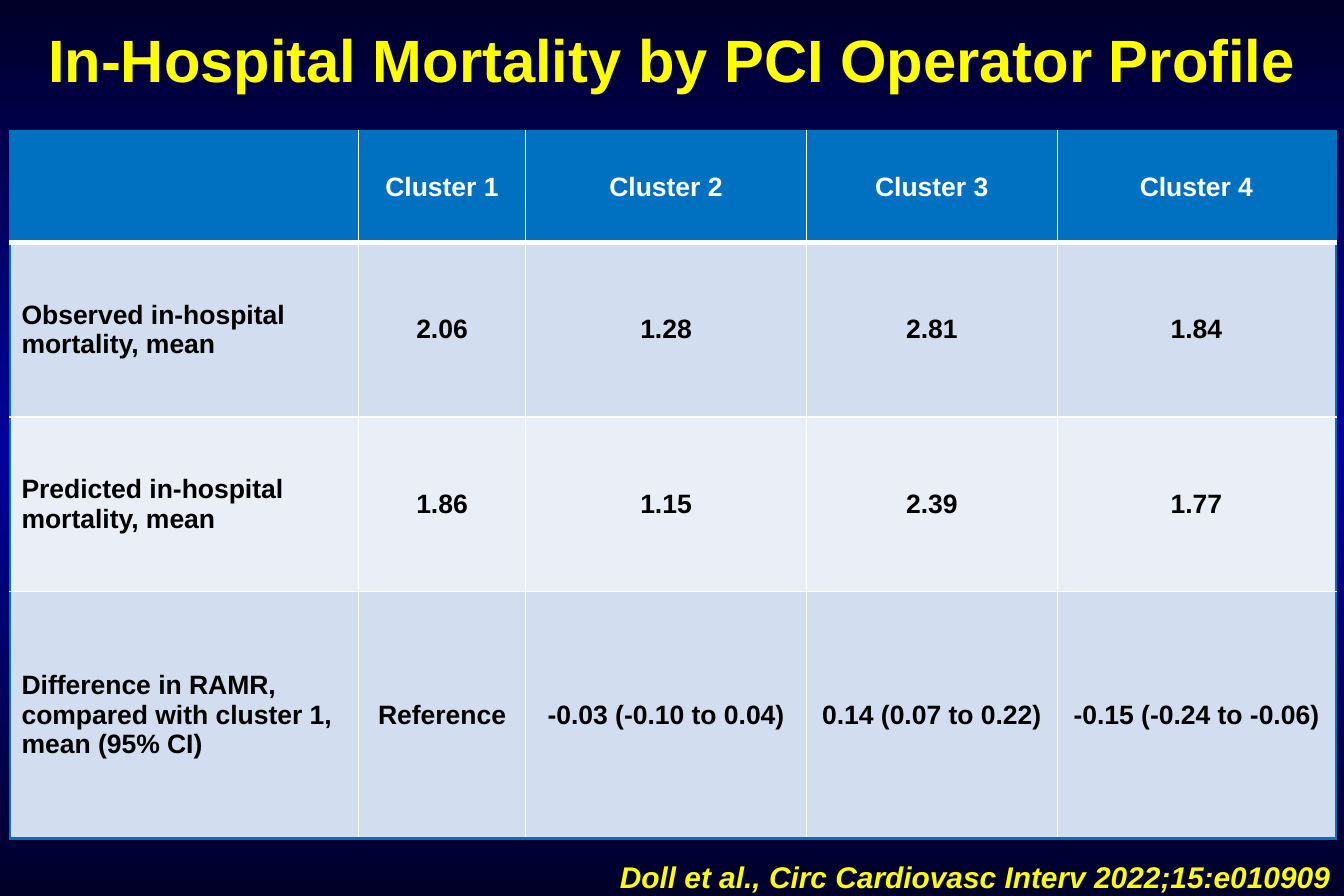
from copy import deepcopy

from lxml.etree import SubElement
from pptx import Presentation
from pptx.dml.color import RGBColor
from pptx.enum.text import MSO_ANCHOR, MSO_AUTO_SIZE, PP_ALIGN
from pptx.oxml.ns import qn
from pptx.util import Pt

NAVY = RGBColor(0x00, 0x00, 0x28)
INDIGO = RGBColor(0x00, 0x00, 0x9C)
YELLOW = RGBColor(0xFF, 0xFF, 0x00)
WHITE = RGBColor(0xFF, 0xFF, 0xFF)
BLACK = RGBColor(0x00, 0x00, 0x00)
BLUE = RGBColor(0x00, 0x70, 0xC0)
BANDS = [RGBColor(0xEA, 0xEF, 0xF7), RGBColor(0xD2, 0xDE, 0xEF)]

TITLE = "In-Hospital Mortality by PCI Operator Profile"
CITE = "Doll et al., Circ Cardiovasc Interv 2022;15:e010909"
ROWS = [
    ["", "Cluster 1", "Cluster 2", "Cluster 3", "Cluster 4"],
    ["Observed in-hospital mortality, mean", "2.06", "1.28", "2.81", "1.84"],
    ["Predicted in-hospital mortality, mean", "1.86", "1.15", "2.39", "1.77"],
    ["Difference in RAMR, compared with cluster 1, mean (95% CI)", "Reference",
     "-0.03 (-0.10 to 0.04)", "0.14 (0.07 to 0.22)", "-0.15 (-0.24 to -0.06)"],
]
WIDTHS = [210.2, 100.8, 169.2, 151.2, 167.8]
HEIGHTS = [67, 105.1, 105.1, 149]
GRADIENT = [(0, NAVY), (0.5, INDIGO), (1, NAVY)]
LAST_ROW, LAST_COL = len(ROWS) - 1, len(WIDTHS) - 1


def write(frame, text, color, align, **look):
    para = frame.paragraphs[0]
    para.alignment = align
    run = para.add_run()
    run.text = text
    run.font.color.rgb = color
    for key, value in {"name": "Arial", "bold": True, **look}.items():
        setattr(run.font, key, value)


def add_label(slide, box, text, wrap, align, **look):
    frame = slide.shapes.add_textbox(*map(Pt, box)).text_frame
    frame.word_wrap = wrap
    frame.auto_size = MSO_AUTO_SIZE.SHAPE_TO_FIT_TEXT
    write(frame, text, YELLOW, align, **look)


def edge(cell, side, color, width):
    """Draw one border of a cell; call before filling the cell."""
    line = SubElement(cell._tc.get_or_add_tcPr(), qn("a:ln" + side), w=str(Pt(width)))
    SubElement(SubElement(line, qn("a:solidFill")), qn("a:srgbClr"), val=str(color))


def style(cell, row, col):
    rim, grid = (BLUE, 1.5), (WHITE, 1)
    rule = (WHITE, 3)
    edge(cell, "L", *(rim if col == 0 else grid))
    edge(cell, "R", *(rim if col == LAST_COL else grid))
    edge(cell, "T", *(rim if row == 0 else rule if row == 1 else grid))
    edge(cell, "B", *(rule if row == 0 else rim if row == LAST_ROW else grid))
    cell.fill.solid()
    cell.fill.fore_color.rgb = BANDS[row % 2] if row else BLUE
    cell.vertical_anchor = MSO_ANCHOR.MIDDLE


def add_grid(slide):
    table = slide.shapes.add_table(len(ROWS), len(WIDTHS), Pt(5.8), Pt(79.2),
                                   Pt(sum(WIDTHS)), Pt(sum(HEIGHTS))).table
    for column, width in zip(table.columns, WIDTHS):
        column.width = Pt(width)
    for row, (texts, height) in enumerate(zip(ROWS, HEIGHTS)):
        table.rows[row].height = Pt(height)
        for col, text in enumerate(texts):
            cell = table.cell(row, col)
            style(cell, row, col)
            if text:
                write(cell.text_frame, text, BLACK if row else WHITE,
                      PP_ALIGN.CENTER if col else PP_ALIGN.LEFT, size=Pt(16))


def paint(slide):
    fill = slide.background.fill
    fill.gradient()
    fill.gradient_angle = 270
    stops = slide.element.find(".//" + qn("a:gsLst"))
    stops.append(deepcopy(stops[-1]))
    for stop, (place, color) in zip(fill.gradient_stops, GRADIENT):
        stop.position = place
        stop.color.rgb = color


def main():
    deck = Presentation()
    deck.slide_width, deck.slide_height = Pt(810), Pt(540)
    slide = deck.slides.add_slide(deck.slide_layouts[6])
    paint(slide)
    add_label(slide, (0, 10, 810, 51), TITLE, True, PP_ALIGN.CENTER, size=Pt(36))
    add_label(slide, (366.5, 514, 443.5, 29), CITE, False, PP_ALIGN.LEFT,
              size=Pt(18), italic=True)
    add_grid(slide)
    deck.save("out.pptx")


if __name__ == "__main__":
    main()
